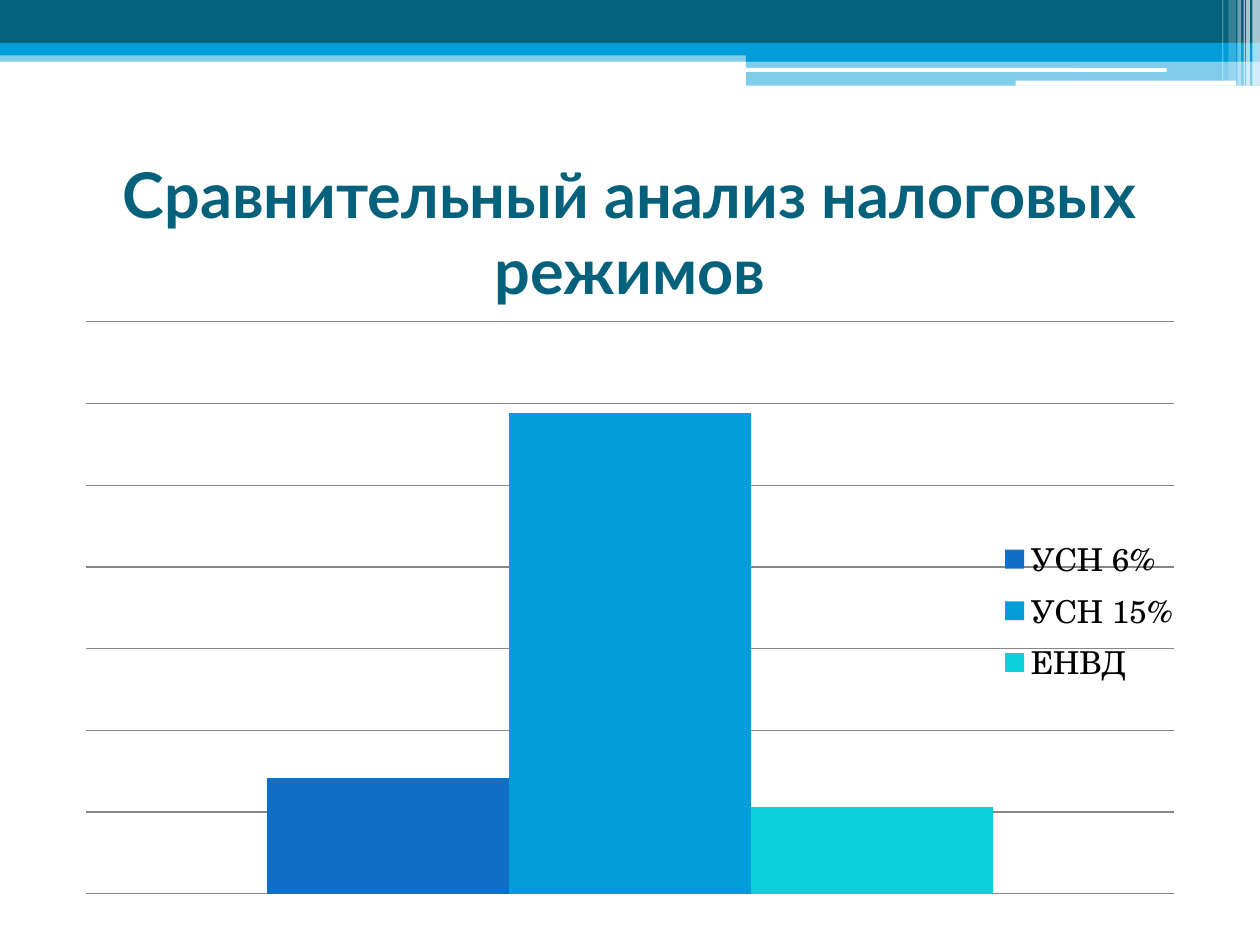
from lxml import etree
from pptx import Presentation
from pptx.chart.data import CategoryChartData as ChartData
from pptx.dml.color import RGBColor as Color
from pptx.enum.chart import XL_CHART_TYPE as ChartType, XL_LEGEND_POSITION as LegendPosition
from pptx.enum.shapes import MSO_SHAPE as Shape
from pptx.enum.text import MSO_ANCHOR as Anchor, PP_ALIGN as Align
from pptx.oxml import parse_xml
from pptx.oxml.ns import nsdecls, qn
from pptx.util import Inches, Pt

COLORS = {
    "teal": "04617B",
    "blue": "009DD9",
    "royal": "0F6FC6",
    "turquoise": "0BD0D9",
    "white": "FFFFFF",
    "black": "000000",
    "grid": "868686",
}
COLUMNS, ROWS = 100, 75


class SlideBuilder:
    """Holds the style and the current slide; boxes are in grid columns and rows."""

    title_font = "Lato"
    chart_font = "TeX Gyre Schola"

    def __init__(self, presentation):
        self.column = presentation.slide_width / COLUMNS
        self.row = presentation.slide_height / ROWS
        self.slide = presentation.slides.add_slide(presentation.slide_layouts[6])

    def box(self, left, top, width, height):
        return (int(left * self.column), int(top * self.row),
                int(width * self.column), int(height * self.row))

    def color(self, name):
        return Color.from_string(COLORS[name])

    def bar(self, *place, color, opacity=100, kind=Shape.RECTANGLE):
        shape = self.slide.shapes.add_shape(kind, *self.box(*place))
        shape.shadow.inherit = False
        shape.line.fill.background()
        shape.fill.solid()
        shape.fill.fore_color.rgb = self.color(color)
        if opacity < 100:
            color_element = shape.fill._xPr.find(".//" + qn("a:srgbClr"))
            etree.SubElement(color_element, qn("a:alpha")).set("val", str(opacity * 1000))

    def title(self, text, *place):
        frame = self.slide.shapes.add_textbox(*self.box(*place)).text_frame
        frame.word_wrap = True
        frame.vertical_anchor = Anchor.MIDDLE
        paragraph = frame.paragraphs[0]
        paragraph.alignment = Align.CENTER
        run = paragraph.add_run()
        run.text = text
        run.font.name, run.font.size, run.font.bold = self.title_font, Pt(36), True
        run.font.color.rgb = self.color("teal")

    def layout(self, x, y, width, height, inner=False):
        target = '<c:layoutTarget val="inner"/>' if inner else ""
        return parse_xml(
            f'<c:layout {nsdecls("c")}><c:manualLayout>{target}'
            '<c:xMode val="edge"/><c:yMode val="edge"/>'
            f'<c:x val="{x}"/><c:y val="{y}"/><c:w val="{width}"/><c:h val="{height}"/>'
            '</c:manualLayout></c:layout>')

    def column_chart(self, series, *place, maximum, step):
        data = ChartData(number_format='#,##0.00\\ "₽"')
        data.categories = ["1"]
        for name, value, _ in series:
            data.add_series(name, [value])
        chart = self.slide.shapes.add_chart(
            ChartType.COLUMN_CLUSTERED, *self.box(*place), data).chart
        chart.has_title = False
        chart.font.name, chart.font.size = self.chart_font, Pt(18)
        chart.font.color.rgb = self.color("black")

        # Axes: hidden, with gridlines only
        axis = chart.value_axis
        axis.minimum_scale, axis.maximum_scale, axis.major_unit = 0, maximum, step
        axis.has_major_gridlines = True
        axis.major_gridlines.format.line.color.rgb = self.color("grid")
        axis.major_gridlines.format.line.width = Pt(0.75)
        axis.visible = chart.category_axis.visible = False

        # Columns
        plot = chart.plots[0]
        plot.gap_width, plot.overlap, plot.vary_by_categories = 150, 0, False
        for item, (_, _, color) in zip(plot.series, series):
            item.format.fill.solid()
            item.format.fill.fore_color.rgb = self.color(color)
        plot_area = chart._chartSpace.chart.plotArea
        for old in plot_area.findall(qn("c:layout")):
            plot_area.remove(old)
        plot_area.insert(0, self.layout(0.02, 0.02, 0.96, 0.96, inner=True))

        # Legend: laid over the plot
        chart.has_legend = True
        legend = chart.legend
        legend.position, legend.include_in_layout = LegendPosition.RIGHT, True
        element = legend._element
        for old in element.findall(qn("c:layout")):
            element.remove(old)
        element.find(qn("c:legendPos")).addnext(self.layout(0.82, 0.37, 0.17, 0.27))


def main():
    presentation = Presentation()
    presentation.slide_width, presentation.slide_height = Inches(10), Inches(7.5)
    builder = SlideBuilder(presentation)

    # Header bands
    builder.bar(0, 4, 100, 0.9, color="blue", opacity=50)
    builder.bar(0, 0, 100, 3.4, color="teal")
    builder.bar(0, 3.4, 100, 1, color="blue")
    builder.bar(59.2, 3.9, 40.8, 1, color="blue")
    builder.bar(59.2, 4.8, 40.8, 2, color="blue", opacity=50)
    for place in ((59.1, 5.4, 33.5, 0.3), (80.6, 6.4, 17.5, 0.4)):
        builder.bar(*place, color="white", kind=Shape.ROUNDED_RECTANGLE)

    # Light stripes in the corner: left, width, height, opacity
    for left, width, height, opacity in (
            (99.4, 0.6, 6.8, 65), (98.9, 0.3, 6.8, 65), (98.7, 0.1, 6.8, 60),
            (98.2, 0.3, 6.8, 40), (97.5, 0.6, 6.4, 20), (97, 0.1, 6.4, 30)):
        builder.bar(left, 0, width, height, color="white", opacity=opacity)

    # Title and chart
    builder.title("Сравнительный анализ налоговых режимов", 5, 12.5, 90, 11.7)
    tax_regimes = [("УСН 6%", 24, "royal"), ("УСН 15%", 100, "blue"),
                   ("ЕНВД", 18, "turquoise")]
    builder.column_chart(tax_regimes, 5, 24.6, 90, 47.3, maximum=119, step=17)

    presentation.save("out.pptx")


if __name__ == "__main__":
    main()
